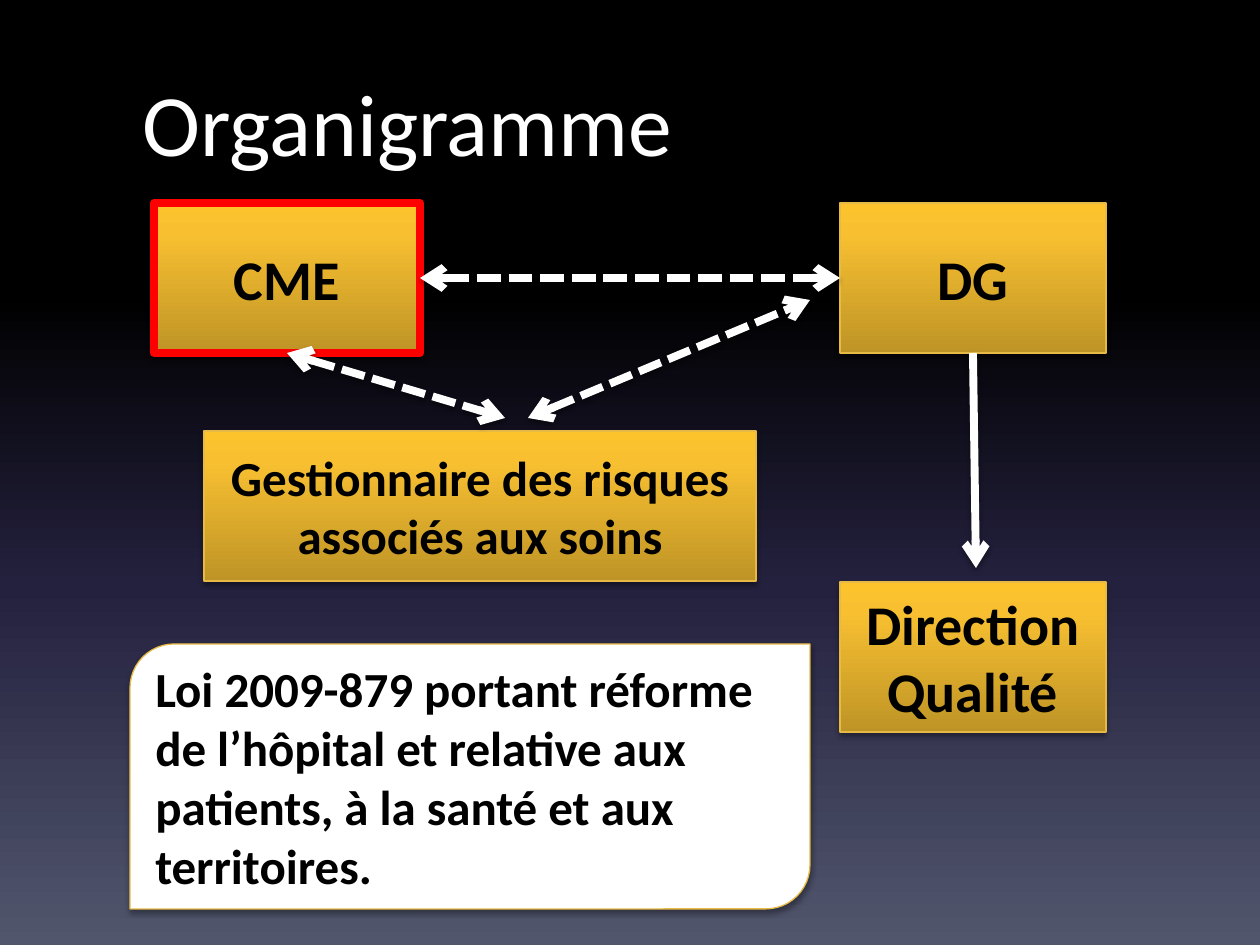
from dataclasses import dataclass

from lxml import etree
from pptx import Presentation
from pptx.dml.color import RGBColor
from pptx.enum.dml import MSO_LINE
from pptx.enum.shapes import MSO_CONNECTOR, MSO_SHAPE
from pptx.enum.text import MSO_ANCHOR, PP_ALIGN
from pptx.oxml.ns import qn
from pptx.util import Pt

RECTANGLE = MSO_SHAPE.RECTANGLE
DIAGONAL_ROUND = MSO_SHAPE.ROUND_2_DIAG_RECTANGLE
STRAIGHT = MSO_CONNECTOR.STRAIGHT
DASHED = MSO_LINE.SQUARE_DOT
TOP, MIDDLE = MSO_ANCHOR.TOP, MSO_ANCHOR.MIDDLE
LEFT, CENTER = PP_ALIGN.LEFT, PP_ALIGN.CENTER
LEFT_SIDE, BOTTOM_SIDE, RIGHT_SIDE = 1, 2, 3
EMU_PER_PX = 914400 / 126


@dataclass(frozen=True)
class Theme:
    font: str = "Calibri"
    title_size: int = 50
    unit_size: int = 32
    body_size: int = 28
    white: str = "FFFFFF"
    black: str = "000000"
    red: str = "FF0000"
    gold_line: str = "E7BA45"
    thin: float = 0.75
    thick: float = 4.5
    gold: tuple = ((0, "BF9426"), (80, "F8C031"), (100, "FDC32D"))
    night: tuple = ((0, "000000"), (31, "000000"), (62, "24213E"), (100, "51566D"))


THEME = Theme()


def px(length):
    return round(length * EMU_PER_PX)


def color(value):
    return RGBColor.from_string(value)


def set_gradient(fill, owner, stops, angle):
    """Fill with any number of stops; the angle runs counter-clockwise."""
    fill.gradient()
    fill.gradient_angle = angle
    stop_list = next(owner.iter(qn("a:gsLst")))
    for stop in list(stop_list):
        stop_list.remove(stop)
    for position, value in stops:
        stop = etree.SubElement(stop_list, qn("a:gs"), pos=str(position * 1000))
        etree.SubElement(stop, qn("a:srgbClr"), val=value)


def add_shadow(effects, distance, opacity):
    shadow = etree.SubElement(
        effects, qn("a:outerShdw"), blurRad=str(Pt(3.1)), dist=str(Pt(distance)),
        dir="5400000", rotWithShape="0")
    tint = etree.SubElement(shadow, qn("a:srgbClr"), val=THEME.black)
    etree.SubElement(tint, qn("a:alpha"), val=str(opacity * 1000))


def write_text(box, text, size, value, bold, align, anchor):
    frame = box.text_frame
    frame.word_wrap = True
    frame.vertical_anchor = anchor
    frame.text = text
    for para in frame.paragraphs:
        para.alignment = align
        for span in para.runs:
            span.font.name = THEME.font
            span.font.size = Pt(size)
            span.font.bold = bold
            span.font.color.rgb = color(value)


def add_title(page, text, left, top, width, height):
    box = page.shapes.add_textbox(px(left), px(top), px(width), px(height))
    write_text(box, text, THEME.title_size, THEME.white, False, LEFT, TOP)


def add_box(page, kind, text, place, size, align=CENTER, gold=True,
            outline=THEME.gold_line, weight=THEME.thin):
    box = page.shapes.add_shape(kind, *map(px, place))
    if gold:
        set_gradient(box.fill, box.element.spPr, THEME.gold, 90)
    else:
        box.fill.solid()
        box.fill.fore_color.rgb = color(THEME.white)
    box.line.color.rgb = color(outline)
    box.line.width = Pt(weight)
    box.shadow.inherit = False
    add_shadow(box.element.spPr.find(qn("a:effectLst")), 1.8, 35)
    write_text(box, text, size, THEME.black, True, align, MIDDLE)
    return box


def add_arrow(page, start, end, two_way=True):
    """Draw an arrow; each end is a point or a (box, side) pair."""
    joins = [isinstance(spot[0], int) is False for spot in (start, end)]
    first, last = ((0, 0) if joined else spot
                   for joined, spot in zip(joins, (start, end)))
    arrow = page.shapes.add_connector(STRAIGHT, *map(px, first + last))
    if joins[0]:
        arrow.begin_connect(*start)
    if joins[1]:
        arrow.end_connect(*end)
    arrow.line.color.rgb = color(THEME.white)
    arrow.line.width = Pt(THEME.thick)
    if two_way:
        arrow.line.dash_style = DASHED
    properties = arrow.element.spPr
    outline = properties.find(qn("a:ln"))
    for tag in ("a:headEnd", "a:tailEnd") if two_way else ("a:tailEnd",):
        etree.SubElement(outline, qn(tag), type="arrow")
    add_shadow(etree.SubElement(properties, qn("a:effectLst")), 1.6, 38)


def main():
    deck = Presentation()
    deck.slide_width, deck.slide_height = px(1260), px(945)
    page = deck.slides.add_slide(deck.slide_layouts[6])
    set_gradient(page.background.fill, page.element, THEME.night, 270)

    add_title(page, "Organigramme", 130, 63, 1134, 158)

    # Units of the organisation
    unit_width, unit_height = 266, 150
    left_column, right_column, top_row = 154, 840, 203
    cme = add_box(page, RECTANGLE, "CME",
                  (left_column, top_row, unit_width, unit_height),
                  THEME.unit_size, outline=THEME.red, weight=THEME.thick)
    dg = add_box(page, RECTANGLE, "DG",
                 (right_column, top_row, unit_width, unit_height), THEME.unit_size)
    add_box(page, RECTANGLE, "Direction\nQualité",
            (right_column, 582, unit_width, unit_height), THEME.unit_size)
    add_box(page, RECTANGLE, "Gestionnaire des risques associés aux soins",
            (204, 431, 552, unit_height), THEME.body_size)

    # Links between the units
    add_arrow(page, (cme, RIGHT_SIDE), (dg, LEFT_SIDE))
    add_arrow(page, (528, 418), (810, 300))
    add_arrow(page, (cme, BOTTOM_SIDE), (505, 418))
    add_arrow(page, (dg, BOTTOM_SIDE), (976, 568), two_way=False)

    # Legal reference
    add_box(page, DIAGONAL_ROUND,
            "Loi 2009-879 portant réforme de l’hôpital et relative aux patients, "
            "à la santé et aux territoires.",
            (130, 644, 680, 265), THEME.body_size, align=LEFT, gold=False)

    deck.save("out.pptx")


if __name__ == "__main__":
    main()
